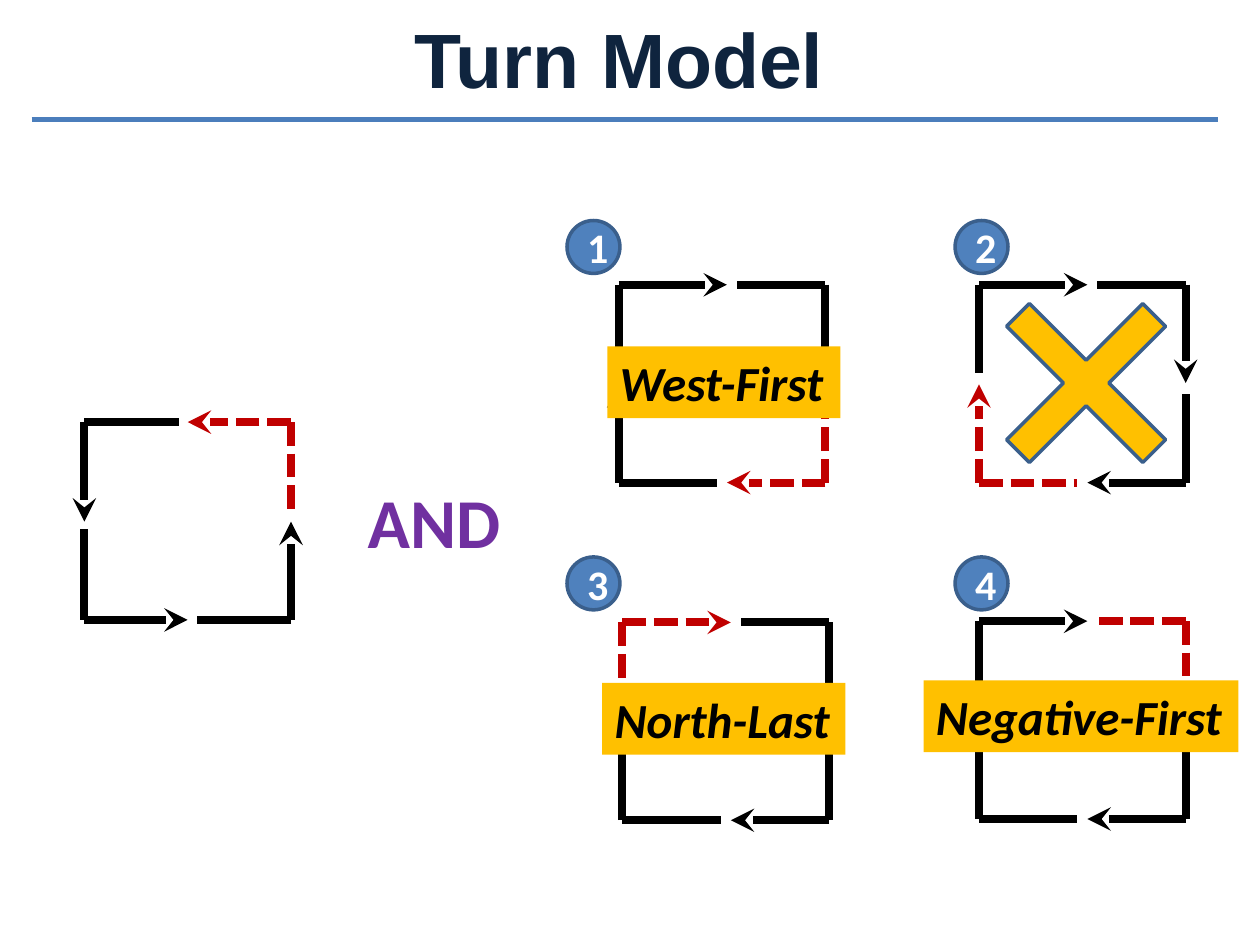
from pptx import Presentation
from pptx.dml.color import RGBColor
from pptx.enum.dml import MSO_LINE
from pptx.enum.shapes import MSO_CONNECTOR, MSO_SHAPE
from pptx.enum.text import MSO_ANCHOR, MSO_AUTO_SIZE, PP_ALIGN
from pptx.oxml.ns import qn
from pptx.util import Inches, Pt
from lxml.etree import SubElement

BLACK, RED, AMBER = "000000", "C00000", "FFC000"
BLUE, DARK_BLUE = "4F81BD", "3A5F8C"
LOOP_WIDTH, LOOP_HEIGHT = 1.64, 1.57

# Corner (share of the loop) with its plain arm and its arrow arm, in inches
CLOCKWISE = {
    "top left": ((0, 0), (0, 0.7), (0.86, 0)),
    "top right": ((1, 0), (-0.7, 0), (0, 0.78)),
    "bottom left": ((0, 1), (0.78, 0), (0, -0.78)),
    "bottom right": ((1, 1), (0, -0.7), (-0.78, 0)),
}
COUNTERCLOCKWISE = {
    "top left": ((0, 0), (0.75, 0), (0, 0.79)),
    "top right": ((1, 0), (0, 0.72), (-0.82, 0)),
    "bottom left": ((0, 1), (0, -0.72), (0.82, 0)),
    "bottom right": ((1, 1), (-0.75, 0), (0, -0.78)),
}


def color(value):
    return RGBColor.from_string(value)


def add_line(slide, start, end, line_color, width, dashed=False, arrow=False):
    points = [Inches(value) for value in (*start, *end)]
    line = slide.shapes.add_connector(MSO_CONNECTOR.STRAIGHT, *points)
    line.line.color.rgb = color(line_color)
    line.line.width = Pt(width)
    if dashed:
        line.line.dash_style = MSO_LINE.SQUARE_DOT
    if arrow:
        SubElement(line.line._get_or_add_ln(), qn("a:tailEnd"), type="stealth")
    SubElement(line._element.spPr, qn("a:effectLst"))


def add_loop(slide, left, top, turns, forbidden):
    """Draw four turns; the forbidden one is red and dashed."""
    for name, (corner, plain_arm, arrow_arm) in turns.items():
        x = left + corner[0] * LOOP_WIDTH
        y = top + corner[1] * LOOP_HEIGHT
        banned = name == forbidden
        for arm, arrow in ((plain_arm, False), (arrow_arm, True)):
            add_line(slide, (x, y), (x + arm[0], y + arm[1]),
                     RED if banned else BLACK, 4.5, banned, arrow)


def write(shape, text, font, size, text_color, italic=False, align=PP_ALIGN.LEFT):
    para = shape.text_frame.paragraphs[0]
    para.alignment = align
    span = para.add_run()
    span.text = text
    span.font.name = font
    span.font.size = Pt(size)
    span.font.bold = True
    span.font.italic = italic
    span.font.color.rgb = color(text_color)


def add_text(slide, area, text, font, size, text_color, fill=None, italic=False):
    box = slide.shapes.add_textbox(*map(Inches, area))
    box.text_frame.word_wrap = False
    box.text_frame.auto_size = MSO_AUTO_SIZE.SHAPE_TO_FIT_TEXT
    if fill:
        box.fill.solid()
        box.fill.fore_color.rgb = color(fill)
    write(box, text, font, size, text_color, italic)


def add_outlined(slide, kind, area, fill):
    shape = slide.shapes.add_shape(kind, *map(Inches, area))
    shape.shadow.inherit = False
    shape.fill.solid()
    shape.fill.fore_color.rgb = color(fill)
    shape.line.color.rgb = color(DARK_BLUE)
    shape.line.width = Pt(2)
    return shape


def add_badge(slide, left, top, number):
    badge = add_outlined(slide, MSO_SHAPE.OVAL, (left, top, 0.42, 0.42), BLUE)
    badge.text_frame.vertical_anchor = MSO_ANCHOR.MIDDLE
    write(badge, str(number), "Calibri", 24, "FFFFFF", align=PP_ALIGN.CENTER)


def add_title(slide, text):
    box = slide.shapes.add_textbox(*map(Inches, (0.5, 0, 9, 0.87)))
    box.text_frame.word_wrap = True
    box.text_frame.vertical_anchor = MSO_ANCHOR.BOTTOM
    write(box, text, "Arial", 44, "0F243E", align=PP_ALIGN.CENTER)
    add_line(slide, (0.25, 0.95), (9.67, 0.95), "4B7EBC", 3)


def main():
    deck = Presentation()
    deck.slide_width, deck.slide_height = Inches(10), Inches(7.5)
    page = deck.slides.add_slide(deck.slide_layouts[6])

    add_title(page, "Turn Model ")

    # One forbidden counterclockwise turn, combined with each clockwise one
    add_loop(page, 0.67, 3.35, COUNTERCLOCKWISE, "top right")
    add_text(page, (2.82, 3.75, 1.27, 0.77), "AND", "Calibri", 40, "7030A0")

    loops = [
        (4.91, 2.26, "bottom right"),
        (7.77, 2.26, "bottom left"),
        (4.94, 4.94, "top left"),
        (7.77, 4.93, "top right"),
    ]
    for index, (left, top, forbidden) in enumerate(loops):
        row, column = divmod(index, 2)
        add_loop(page, left, top, CLOCKWISE, forbidden)
        add_badge(page, 4.5 + 3.08 * column, 1.75 + 2.67 * row, index + 1)

    # Valid routing algorithms
    labels = [
        ("West-First", 4.82, 2.75, 1.85),
        ("North-Last", 4.78, 5.42, 1.93),
        ("Negative-First", 7.33, 5.4, 2.5),
    ]
    for text, left, top, width in labels:
        add_text(page, (left, top, width, 0.57), text, "Calibri", 28, BLACK,
                 AMBER, italic=True)

    # Cross over the combination that does not work
    cross = add_outlined(page, MSO_SHAPE.MATH_MULTIPLY, (7.58, 2, 2.08, 2.08), AMBER)
    cross.adjustments[0] = 0.123

    deck.save("out.pptx")


if __name__ == "__main__":
    main()
